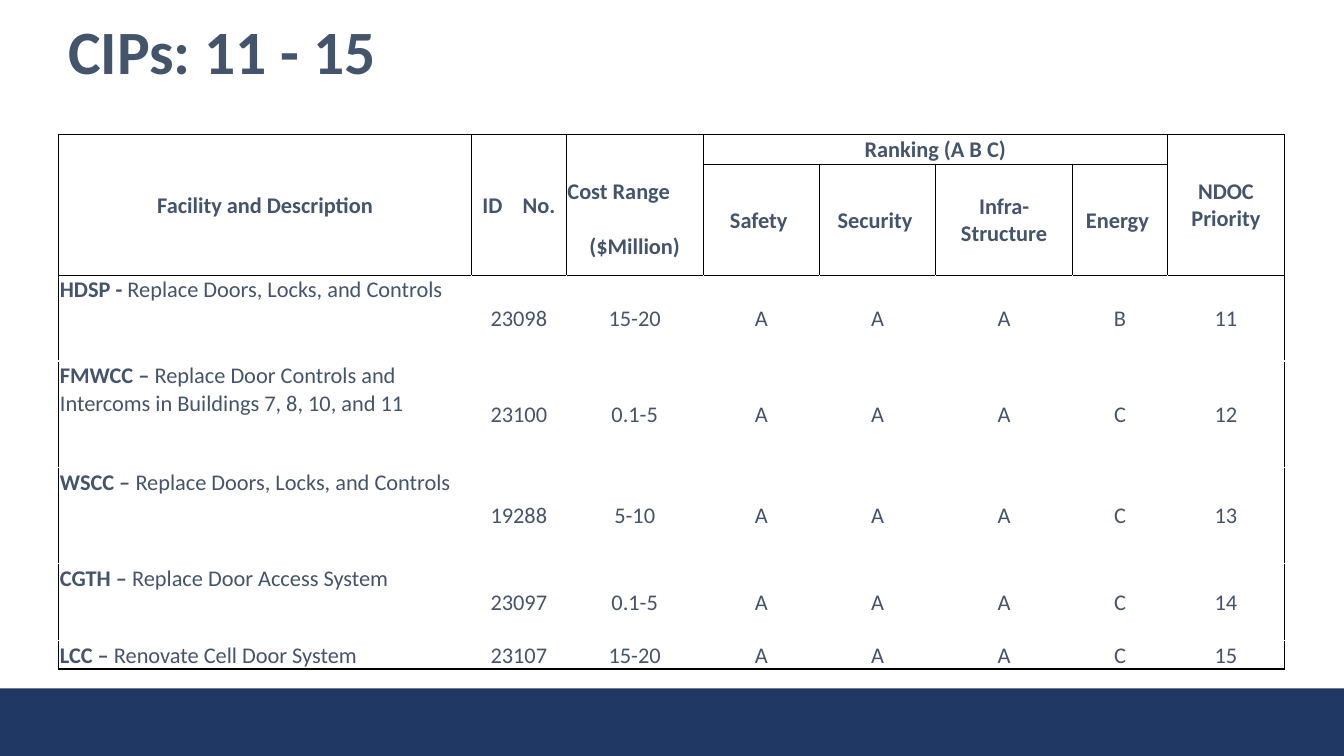
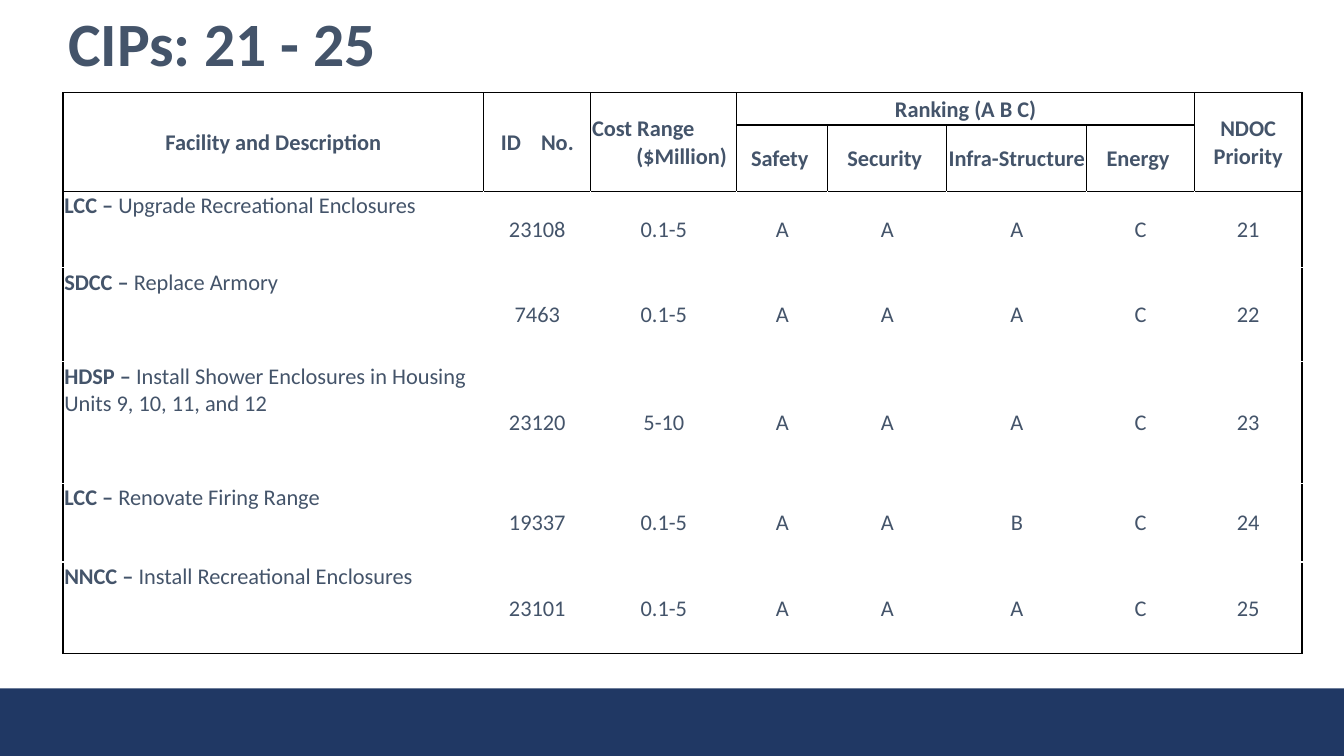
import dataclasses

import pptx
import pptx.dml.color
import pptx.enum.shapes
import pptx.enum.text
import pptx.oxml
import pptx.oxml.ns
import pptx.util

Cm = pptx.util.Cm
Pt = pptx.util.Pt
ALIGN = pptx.enum.text.PP_ALIGN
ANCHOR = pptx.enum.text.MSO_ANCHOR

FONT = "Calibri"
TEXT = "44546A"
BAND = "203864"
BLACK = "000000"
WHITE = "FFFFFF"
HEADER_ROWS = 2
INSET = 0.03
RANKINGS = ["Safety ", "Security ", "Infra-Structure", "Energy "]


@dataclasses.dataclass
class CostHeader:
    """How the two lines of the cost heading sit in their cell."""
    unit_align: int
    gap: float = 0
    top: float = INSET
    right: float = INSET


@dataclasses.dataclass
class Listing:
    title: str
    title_top: float
    left: float
    top: float
    columns: list
    heights: list
    cost: CostHeader
    projects: list


LISTINGS = [
    Listing(
        "CIPs: 11 - 15", 0.4, 1.48, 3.39,
        [10.4, 2.39, 3.45, 2.93, 2.93, 3.45, 2.39, 2.95],
        [0.75, 2.8, 2.16, 2.69, 2.41, 1.94, 0.72],
        CostHeader(ALIGN.CENTER, gap=19.5, top=0.72),
        [
            ("HDSP - ", "Replace Doors, Locks, and Controls", "23098", "15-20", "AAAB", "11"),
            ("FMWCC – ", "Replace Door Controls and Intercoms in Buildings 7, 8, 10, and 11",
             "23100", "0.1-5", "AAAC", "12"),
            ("WSCC – ", "Replace Doors, Locks, and Controls", "19288", "5-10", "AAAC", "13"),
            ("CGTH – ", "Replace Door Access System", "23097", "0.1-5", "AAAC", "14"),
            ("LCC – ", "Renovate Cell Door System", "23107", "15-20", "AAAC", "15"),
        ],
    ),
    Listing(
        "CIPs: 21 - 25", 0.22, 1.59, 2.34,
        [10.6, 2.7, 3.68, 2.29, 3.0, 3.53, 2.71, 2.71],
        [0.81, 1.67, 1.93, 2.36, 3.07, 1.98, 2.31],
        CostHeader(ALIGN.RIGHT, right=0.25),
        [
            ("LCC – ", "Upgrade Recreational Enclosures", "23108", "0.1-5", "AAAC", "21"),
            ("SDCC – ", "Replace Armory", "7463", "0.1-5", "AAAC", "22"),
            ("HDSP – ", "Install Shower Enclosures in Housing Units 9, 10, 11, and 12",
             "23120", "5-10", "AAAC", "23"),
            ("LCC – ", "Renovate Firing Range", "19337", "0.1-5", "AABC", "24"),
            ("NNCC – ", "Install Recreational Enclosures", "23101", "0.1-5", "AAAC", "25"),
        ],
    ),
]


def color(value):
    return pptx.dml.color.RGBColor.from_string(value)


def add_span(para, text, bold=False, size=16):
    span = para.add_run()
    span.text = text
    span.font.name = FONT
    span.font.size = Pt(size)
    span.font.bold = bold
    span.font.color.rgb = color(TEXT)
    return span


def add_band(page, deck):
    top = Cm(17.35)
    band = page.shapes.add_shape(pptx.enum.shapes.MSO_SHAPE.RECTANGLE,
                                 0, top, deck.slide_width, deck.slide_height - top)
    band.shadow.inherit = False
    band.fill.solid()
    band.fill.fore_color.rgb = color(BAND)
    band.line.fill.background()


def add_title(page, text, top):
    box = page.shapes.add_textbox(Cm(1.47), Cm(top), Cm(9.7), Cm(1.9))
    box.text_frame.word_wrap = True
    para = box.text_frame.paragraphs[0]
    para.line_spacing = 0.9
    add_span(para, text, bold=True, size=44)


def set_borders(cell, **edges):
    properties = cell._tc.get_or_add_tcPr()
    for side in "LRTB":
        properties.append(pptx.oxml.parse_xml(
            f'<a:ln{side} {pptx.oxml.ns.nsdecls("a")} w="12700"><a:solidFill>'
            f'<a:srgbClr val="{edges[side]}"/></a:solidFill></a:ln{side}>'))


def style_cells(table):
    """Rule the heading and the outer frame in black, the rest in white."""
    last_row, last_column = len(table.rows) - 1, len(table.columns) - 1
    for i in range(last_row + 1):
        for j in range(last_column + 1):
            cell = table.cell(i, j)
            heading = i < HEADER_ROWS
            black = {"L": heading or j == 0,
                     "R": heading or j == last_column,
                     "T": i <= HEADER_ROWS,
                     "B": heading or i == last_row}
            set_borders(cell, **{side: BLACK if dark else WHITE for side, dark in black.items()})
            cell.fill.background()
            cell.margin_left = cell.margin_right = cell.margin_top = Cm(INSET)
            cell.margin_bottom = 0
            cell.vertical_anchor = ANCHOR.MIDDLE


def write_centered(cell, text, bold=False):
    para = cell.text_frame.paragraphs[0]
    para.alignment = ALIGN.CENTER
    add_span(para, text, bold)


def write_number_heading(cell):
    write_centered(cell, "ID", bold=True)
    para = cell.text_frame.paragraphs[0]
    gap = add_span(para, " ", bold=True)
    gap.font._element.set("spc", "1080")
    add_span(para, "No.", bold=True)


def write_cost_heading(cell, cost):
    cell.margin_top = Cm(cost.top)
    cell.margin_right = Cm(cost.right)
    label = cell.text_frame.paragraphs[0]
    label.alignment = ALIGN.LEFT
    add_span(label, "Cost Range", bold=True)
    unit = cell.text_frame.add_paragraph()
    unit.alignment = cost.unit_align
    unit.space_before = Pt(cost.gap)
    add_span(unit, "($Million)", bold=True)


def write_heading(table, cost):
    for column in (0, 1, 2, 7):
        table.cell(0, column).merge(table.cell(1, column))
    table.cell(0, 3).merge(table.cell(0, 6))
    for column, text in ((0, "Facility and Description"), (3, "Ranking (A B C)"),
                         (7, "NDOC Priority")):
        write_centered(table.cell(0, column), text, bold=True)
    write_number_heading(table.cell(0, 1))
    write_cost_heading(table.cell(0, 2), cost)
    for column, text in enumerate(RANKINGS, 3):
        write_centered(table.cell(1, column), text, bold=True)


def write_project(table, row, project):
    facility, description, number, cost, ranks, priority = project
    cell = table.cell(row, 0)
    cell.vertical_anchor = ANCHOR.TOP
    para = cell.text_frame.paragraphs[0]
    add_span(para, facility, bold=True)
    add_span(para, description)
    for column, text in enumerate([number, cost, *ranks, priority], 1):
        write_centered(table.cell(row, column), text)


def add_project_table(page, listing):
    frame = page.shapes.add_table(
        len(listing.heights), len(listing.columns), Cm(listing.left), Cm(listing.top),
        Cm(sum(listing.columns)), Cm(sum(listing.heights)))
    table = frame.table
    table.first_row = table.horz_banding = False
    for column, width in zip(table.columns, listing.columns):
        column.width = Cm(width)
    for row, height in zip(table.rows, listing.heights):
        row.height = Cm(height)
    style_cells(table)
    write_heading(table, listing.cost)
    for row, project in enumerate(listing.projects, HEADER_ROWS):
        write_project(table, row, project)


def main():
    deck = pptx.Presentation()
    deck.slide_width, deck.slide_height = Cm(33.87), Cm(19.05)
    for listing in LISTINGS:
        page = deck.slides.add_slide(deck.slide_layouts[6])
        add_band(page, deck)
        add_title(page, listing.title, listing.title_top)
        add_project_table(page, listing)
    deck.save("out.pptx")


if __name__ == "__main__":
    main()
